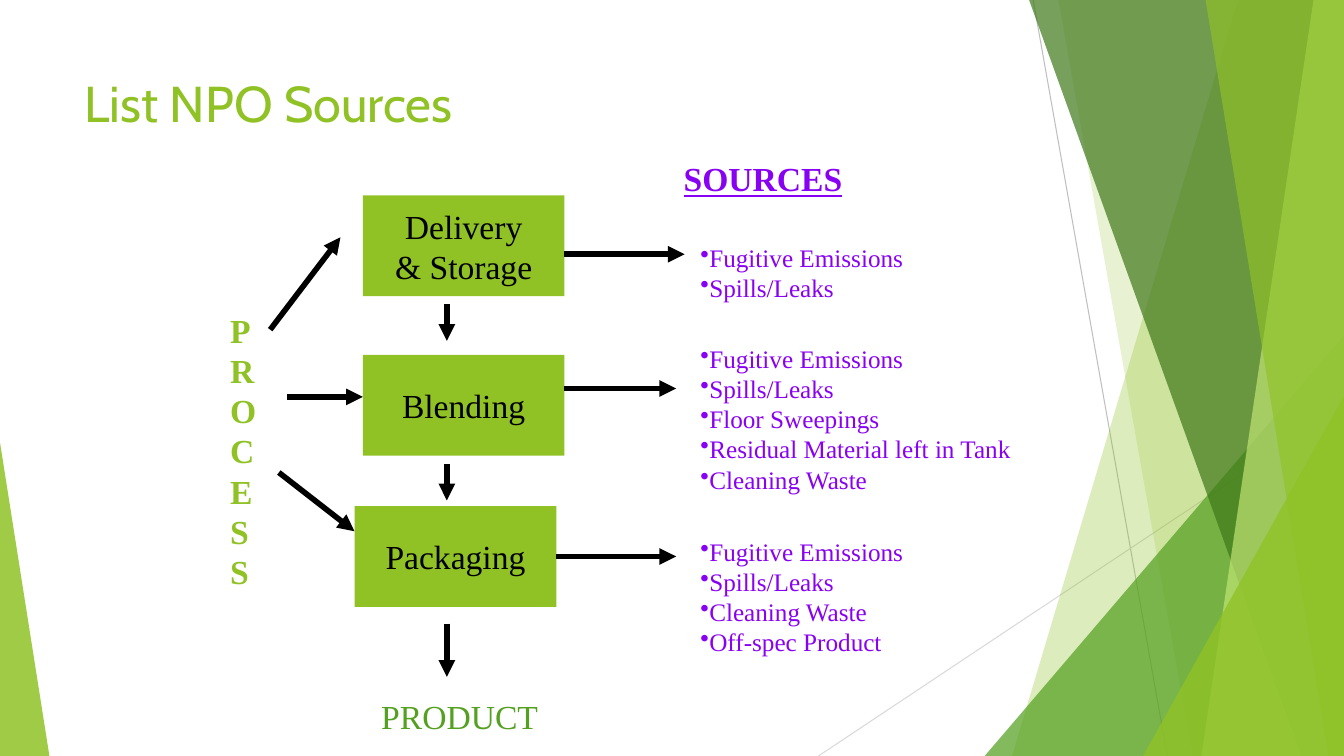
from dataclasses import dataclass
from typing import Optional

from lxml import etree
from pptx import Presentation
from pptx.dml.color import RGBColor
from pptx.enum import shapes, text
from pptx.oxml import ns
from pptx.util import Pt

WIDTH, HEIGHT = 960, 540
GREEN, DARK_GREEN, PURPLE, BLACK = "90C226", "54A021", "8901F3", "000000"
SERIF = "Times New Roman"


@dataclass
class Shard:
    """Band from a slanted left edge to the right edge of the slide."""
    top_x: float
    bottom_x: float
    color: str
    opacity: int


@dataclass
class Wedge:
    """Right triangle standing on the bottom edge of the slide."""
    left: float
    top: float
    width: float
    apex: int
    color: str
    opacity: int


@dataclass
class Step:
    lines: list[str]
    left: float
    top: float


@dataclass
class Arrow:
    x1: float
    y1: float
    x2: float
    y2: float
    step: Optional[int] = None  # step whose right side it starts from


@dataclass
class Label:
    lines: list[str]
    left: float
    top: float
    width: float
    color: str
    size: int = 24
    bold: bool = False
    underline: bool = False
    bullet: bool = False


FACETS = [
    Shard(884.2, 722.9, GREEN, 30),
    Shard(756, 851.8, GREEN, 20),
    Wedge(703.4, 239.8, 256.6, 1, DARK_GREEN, 72),
    Shard(735.1, 929.5, "3F7819", 70),
    Shard(938.2, 858.2, "C0E474", 70),
    Shard(861.1, 949, GREEN, 65),
    Wedge(816.5, 283, 143.5, 1, GREEN, 80),
    Wedge(0, 316.1, 35.3, 0, GREEN, 85),
]
STEPS = [
    Step(["Delivery", "& Storage"], 259.2, 139.6),
    Step(["Blending"], 259.2, 253.6),
    Step(["Packaging"], 253.4, 361.5),
]
ARROWS = [
    # Step to its sources
    Arrow(403.2, 181.6, 489, 181.6),
    Arrow(403.2, 277.5, 483, 277.5),
    Arrow(397.4, 397.5, 483, 397.5, step=2),
    # Step to step, then to the product
    Arrow(319.2, 217.5, 319.2, 243.5),
    Arrow(319.2, 331.5, 319.2, 357.5),
    Arrow(319.2, 445.5, 319.2, 483.5),
    # Process to steps
    Arrow(193, 235.5, 243.2, 169.5),
    Arrow(205, 283.5, 259.2, 283.5),
    Arrow(199.2, 337.5, 253.2, 379.5),
]
COMMON = ["Fugitive Emissions", "Spills/Leaks"]
LABELS = [
    Label(["PRODUCT"], 265.2, 493.4, 127.2, DARK_GREEN),
    Label(list("PROCESS"), 157.2, 217.5, 33.2, GREEN, bold=True),
    Label(["SOURCES"], 481.2, 109.5, 128.6, PURPLE, bold=True, underline=True),
    Label(COMMON, 493.2, 169.5, 160.5, PURPLE, 18, bullet=True),
    Label(COMMON + ["Floor Sweepings", "Residual Material left in Tank", "Cleaning Waste"],
          493.2, 241.5, 237.3, PURPLE, 18, bullet=True),
    Label(COMMON + ["Cleaning Waste", "Off-spec Product"],
          493.2, 379.4, 160.5, PURPLE, 18, bullet=True),
]


def rgb(color: str) -> RGBColor:
    return RGBColor.from_string(color)


def write(frame, lines: list[str], *, color: str, size: int, font: str = SERIF,
          bold: bool = False, underline: bool = False, bullet: bool = False,
          align=text.PP_ALIGN.LEFT, anchor=text.MSO_ANCHOR.TOP, wrap: bool = False) -> None:
    frame.word_wrap = wrap
    frame.vertical_anchor = anchor
    for index, line in enumerate(lines):
        paragraph = frame.add_paragraph() if index else frame.paragraphs[0]
        paragraph.alignment = align
        if bullet:
            mark = etree.SubElement(paragraph._p.get_or_add_pPr(), ns.qn("a:buChar"))
            mark.set("char", "•")
        run = paragraph.add_run()
        run.text = line
        run.font.name, run.font.size = font, Pt(size)
        run.font.bold, run.font.underline = bold, underline
        run.font.color.rgb = rgb(color)


def paint(shape, color: str, opacity: int = 100) -> None:
    shape.shadow.inherit = False
    shape.line.fill.background()
    shape.fill.solid()
    shape.fill.fore_color.rgb = rgb(color)
    if opacity < 100:
        swatch = shape._element.spPr.find(ns.qn("a:solidFill"))[0]
        etree.SubElement(swatch, ns.qn("a:alpha")).set("val", str(opacity * 1000))


def draw_line(slide, arrow: Arrow, color: str, weight: float, head: bool = False):
    line = slide.shapes.add_connector(
        shapes.MSO_CONNECTOR.STRAIGHT, Pt(arrow.x1), Pt(arrow.y1), Pt(arrow.x2), Pt(arrow.y2))
    line.line.color.rgb = rgb(color)
    line.line.width = Pt(weight)
    if head:
        etree.SubElement(line.line._get_or_add_ln(), ns.qn("a:tailEnd")).set("type", "triangle")
    etree.SubElement(line._element.spPr, ns.qn("a:effectLst"))
    return line


def draw_facet(slide, facet: Shard | Wedge) -> None:
    if isinstance(facet, Shard):
        outline = slide.shapes.build_freeform(Pt(facet.top_x), 0)
        corners = [(WIDTH, 0), (WIDTH, HEIGHT), (facet.bottom_x, HEIGHT)]
        outline.add_line_segments([(Pt(x), Pt(y)) for x, y in corners], close=True)
        shape = outline.convert_to_shape()
    else:
        shape = slide.shapes.add_shape(
            shapes.MSO_SHAPE.ISOSCELES_TRIANGLE, Pt(facet.left), Pt(facet.top),
            Pt(facet.width), Pt(HEIGHT - facet.top))
        shape.adjustments[0] = facet.apex
    paint(shape, facet.color, facet.opacity)


def draw_step(slide, step: Step):
    box = slide.shapes.add_shape(
        shapes.MSO_SHAPE.RECTANGLE, Pt(step.left), Pt(step.top), Pt(144), Pt(72))
    paint(box, GREEN)
    write(box.text_frame, step.lines, color=BLACK, size=24,
          align=text.PP_ALIGN.CENTER, anchor=text.MSO_ANCHOR.MIDDLE)
    return box


def draw_label(slide, label: Label) -> None:
    height = 7.2 + 1.2 * label.size * len(label.lines)
    box = slide.shapes.add_textbox(Pt(label.left), Pt(label.top), Pt(label.width), Pt(height))
    write(box.text_frame, label.lines, color=label.color, size=label.size, bold=label.bold,
          underline=label.underline, bullet=label.bullet)
    box.text_frame.auto_size = text.MSO_AUTO_SIZE.SHAPE_TO_FIT_TEXT


def main() -> None:
    prs = Presentation()
    prs.slide_width, prs.slide_height = Pt(WIDTH), Pt(HEIGHT)
    slide = prs.slides.add_slide(prs.slide_layouts[5])

    # Background facets
    draw_line(slide, Arrow(738, 0, 833.8, HEIGHT), "BFBFBF", 0.75)
    draw_line(slide, Arrow(WIDTH, 290.2, 584.6, HEIGHT), "D9D9D9", 0.75)
    for facet in FACETS:
        draw_facet(slide, facet)

    # Title
    title = slide.shapes.title
    title.left, title.top, title.width, title.height = Pt(53.3), Pt(48), Pt(676.8), Pt(104)
    write(title.text_frame, ["List NPO Sources"], color=GREEN, size=36, font="Cabin", wrap=True)

    # Process flow
    boxes = [draw_step(slide, step) for step in STEPS]
    for arrow in ARROWS:
        line = draw_line(slide, arrow, BLACK, 4, head=True)
        if arrow.step is not None:
            line.begin_connect(boxes[arrow.step], 3)

    # Process, product and source lists
    for label in LABELS:
        draw_label(slide, label)

    prs.save("out.pptx")


if __name__ == "__main__":
    main()
